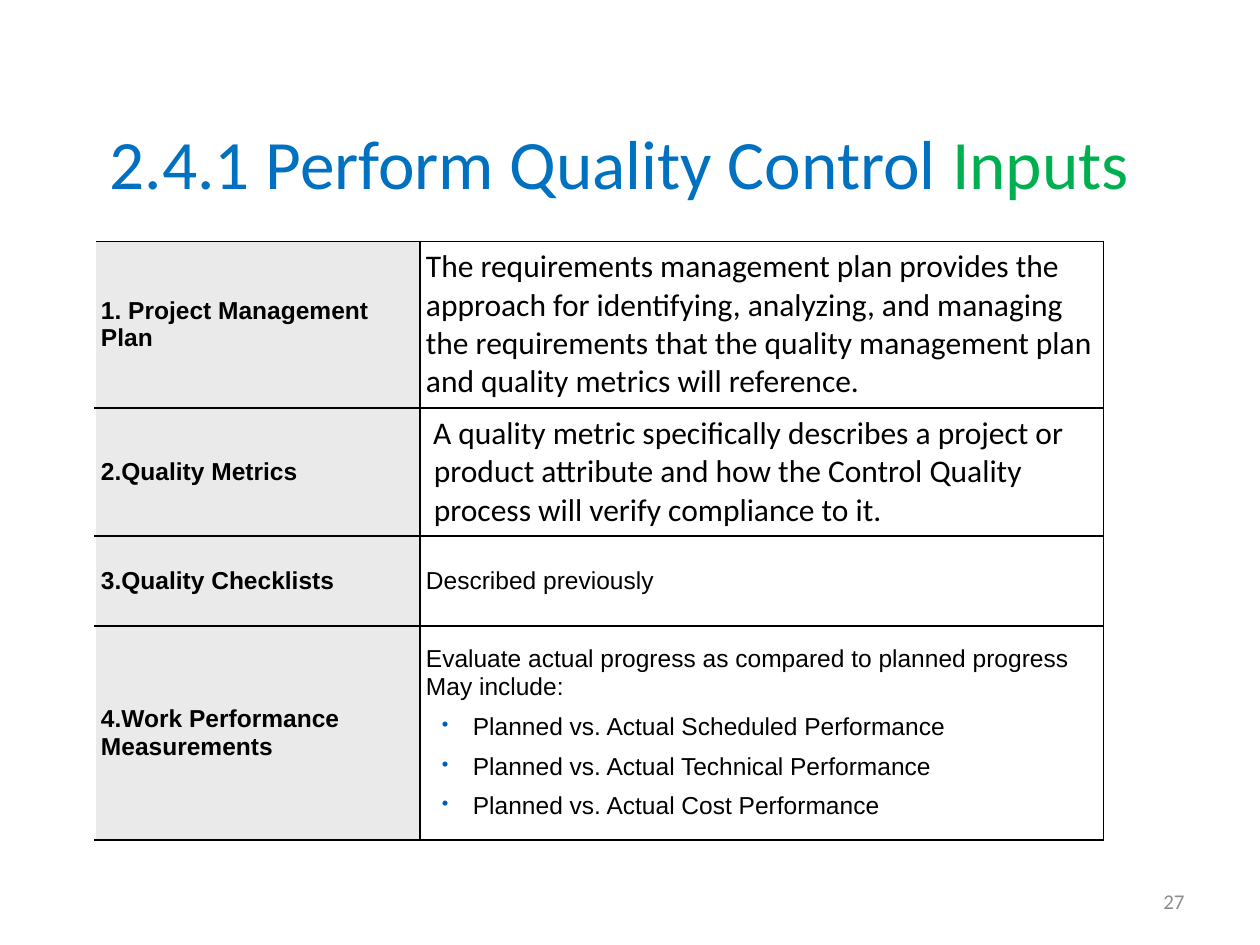
import pptx
import pptx.dml.color
import pptx.enum.text
import pptx.oxml.ns
import pptx.util
from lxml import etree

RGBColor = pptx.dml.color.RGBColor
PP_ALIGN = pptx.enum.text.PP_ALIGN
MIDDLE = pptx.enum.text.MSO_ANCHOR.MIDDLE
BLUE = RGBColor(0x00, 0x70, 0xC0)
GREEN = RGBColor(0x00, 0xB0, 0x50)
BULLET_BLUE = RGBColor(0x00, 0x5C, 0xB8)
BLACK = RGBColor(0x00, 0x00, 0x00)
GRAY = RGBColor(0x8C, 0x8C, 0x8C)
LABEL_FILL = RGBColor(0xEA, 0xEA, 0xEA)
EMU_PER_PX = 914400 / 126


def px(length):
    return pptx.util.Emu(round(length * EMU_PER_PX))


def add_xml(parent, tag, **attributes):
    return etree.SubElement(parent, pptx.oxml.ns.qn(tag), attributes)


class InputsSlide:
    heading_font = "Calibri"
    label_font = "Arial"
    cell_margin = 6

    def __init__(self, presentation):
        self.slide = presentation.slides.add_slide(presentation.slide_layouts[5])

    def style(self, paragraph, font, size, color=BLACK, bold=False):
        paragraph.font.name = font
        paragraph.font.size = pptx.util.Pt(size)
        paragraph.font.color.rgb = color
        paragraph.font.bold = bold

    def title(self, parts, left, top, width, height):
        title = self.slide.shapes.title
        title.left, title.top, title.width, title.height = map(px, (left, top, width, height))
        frame = title.text_frame
        frame.auto_size = pptx.enum.text.MSO_AUTO_SIZE.NONE
        frame.vertical_anchor = MIDDLE
        heading = frame.paragraphs[0]
        heading.alignment = PP_ALIGN.CENTER
        heading.line_spacing = 0.9
        heading.font.name = self.heading_font
        heading.font.size = pptx.util.Pt(39.6)
        for words, color in parts:
            run = heading.add_run()
            run.text = words
            run.font.color.rgb = color

    def page_number(self, number, left, top, width, height):
        box = self.slide.shapes.add_textbox(*map(px, (left, top, width, height)))
        box.text_frame.word_wrap = True
        box.text_frame.vertical_anchor = MIDDLE
        paragraph = box.text_frame.paragraphs[0]
        paragraph.text = number
        paragraph.alignment = PP_ALIGN.RIGHT
        self.style(paragraph, self.heading_font, 12, GRAY)

    def table(self, rows, left, top, widths, heights):
        table = self.slide.shapes.add_table(
            len(rows), len(widths), px(left), px(top), px(sum(widths)), px(sum(heights))
        ).table
        table.first_row = table.horz_banding = False
        for column, width in zip(table.columns, widths):
            column.width = px(width)
        for index, (label, details, font, size) in enumerate(rows):
            table.rows[index].height = px(heights[index])
            top_line = 1 if index else 0.5
            label_cell, detail_cell = table.cell(index, 0), table.cell(index, 1)
            self.cell(label_cell, [label], self.label_font, 14, True, R=1, T=top_line, B=1)
            label_cell.fill.solid()
            label_cell.fill.fore_color.rgb = LABEL_FILL
            self.cell(detail_cell, details, font, size, False, L=1, R=0.5, T=top_line, B=1)
            detail_cell.fill.background()
        return table

    def cell(self, cell, lines, font, size, bold, **borders):
        cell.vertical_anchor = MIDDLE
        cell.margin_left = cell.margin_right = px(self.cell_margin)
        cell.margin_top = cell.margin_bottom = px(self.cell_margin)
        cell.text = "\n".join(lines)
        for paragraph in cell.text_frame.paragraphs:
            self.style(paragraph, font, size, bold=bold)
        properties = cell._tc.get_or_add_tcPr()
        for side, points in borders.items():
            line = add_xml(properties, f"a:ln{side}", w=str(pptx.util.Pt(points)))
            add_xml(add_xml(line, "a:solidFill"), "a:srgbClr", val=str(BLACK))

    def indent(self, paragraph, margin, first_line):
        properties = paragraph._p.get_or_add_pPr()
        properties.set("marL", str(px(margin)))
        properties.set("indent", str(px(first_line)))
        return properties

    def bullet(self, paragraph):
        paragraph.level = 1
        paragraph.space_before = pptx.util.Pt(7)
        properties = self.indent(paragraph, 47, -31)
        defaults = properties.find(pptx.oxml.ns.qn("a:defRPr"))
        color = add_xml(properties, "a:buClr")
        add_xml(color, "a:srgbClr", val=str(BULLET_BLUE))
        size = add_xml(properties, "a:buSzPct", val="80000")
        mark = add_xml(properties, "a:buChar", char="•")
        for part in (color, size, mark):
            defaults.addprevious(part)


def main():
    presentation = pptx.Presentation()
    presentation.slide_width, presentation.slide_height = px(1260), px(945)
    inputs = InputsSlide(presentation)
    inputs.title(
        [("2.4.1 Perform Quality Control ", BLUE), ("Inputs", GREEN)], 21, 136, 1197, 63
    )
    rows = [
        ("1. Project Management Plan",
         ["The requirements management plan provides the approach for identifying, "
          "analyzing, and managing the requirements that the quality management plan "
          "and quality metrics will reference."], "Calibri", 18),
        ("2.Quality Metrics",
         [" A quality metric specifically describes a project or product attribute "
          "and how the Control Quality process will verify compliance to it."],
         "Calibri", 18),
        ("3.Quality Checklists", ["Described previously"], "Arial", 14),
        ("4.Work Performance Measurements",
         ["Evaluate actual progress as compared to planned progress", "May include:"]
         + [f"Planned vs. Actual {kind} Performance"
            for kind in ("Scheduled", "Technical", "Cost")], "Arial", 14),
    ]
    table = inputs.table(rows, 95, 241, [325, 683], [167, 128, 90, 214])
    inputs.indent(table.cell(1, 1).text_frame.paragraphs[0], 8, -8)
    for measurement in table.cell(3, 1).text_frame.paragraphs[2:]:
        inputs.bullet(measurement)
    inputs.page_number("27", 903, 876, 294, 50)
    presentation.save("out.pptx")


if __name__ == "__main__":
    main()
